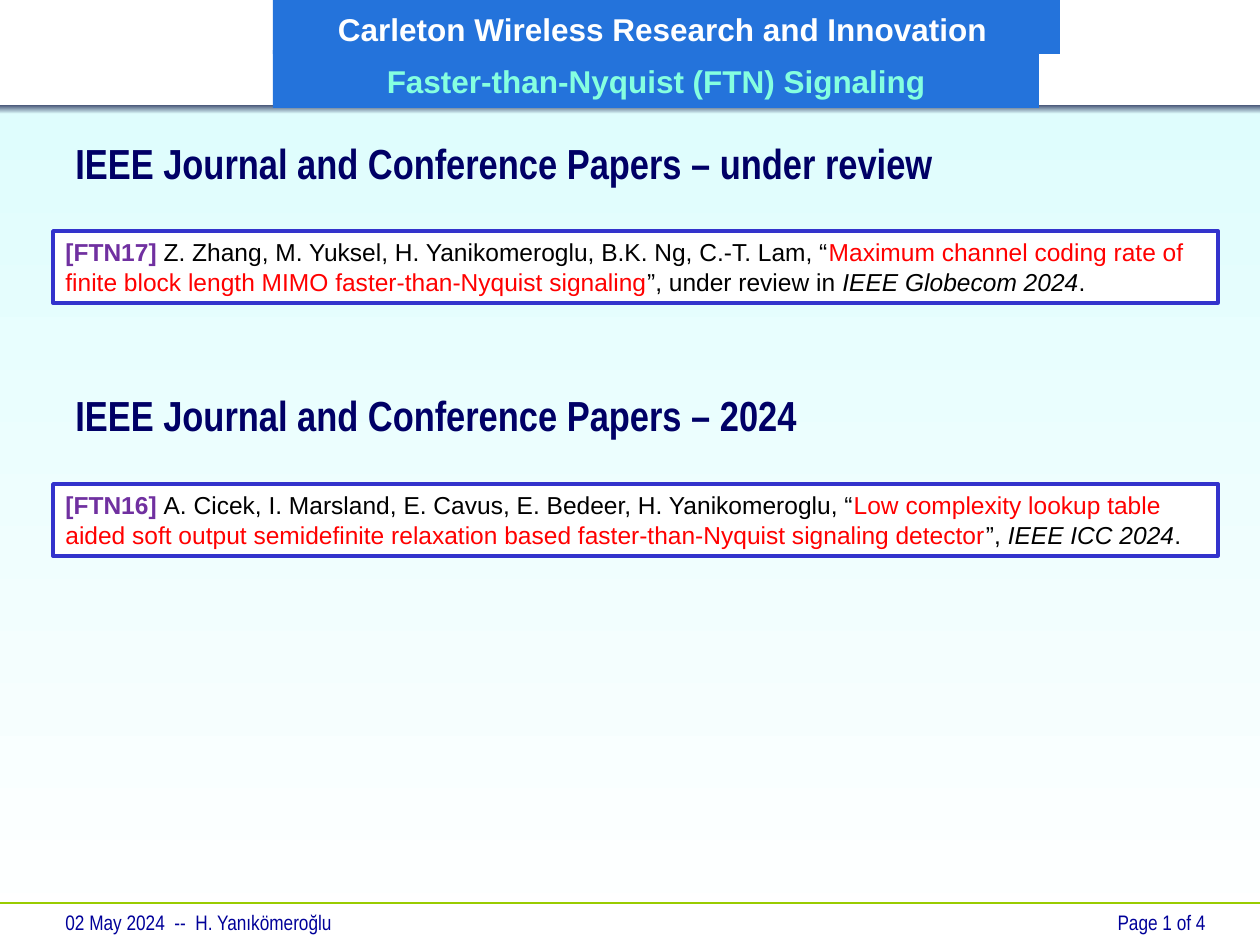
from lxml.etree import SubElement
from pptx import Presentation
from pptx.dml.color import RGBColor
from pptx.enum.shapes import MSO_CONNECTOR, MSO_SHAPE
from pptx.enum.text import MSO_ANCHOR as Anchor, PP_ALIGN as Align
from pptx.oxml.ns import qn
from pptx.util import Pt

EMU_PER_PX = 914400 / 126
SLIDE_W, SLIDE_H = 1260, 945

COLORS = {
    "white": "FFFFFF", "black": "000000", "red": "FF0000",
    "sky": "DFFDFD", "slate": "475577", "lime": "99CC00",
    "banner": "2473DB", "mint": "85FFE0", "heading": "000066",
    "footer": "000099", "border": "3333CC", "label": "7030A0",
}

SECTIONS = [
    {
        "heading": "IEEE Journal and Conference Papers – under review",
        "heading_top": 136, "citation_top": 231,
        "label": "[FTN17] ",
        "authors": "Z. Zhang, M. Yuksel, H. Yanikomeroglu, B.K. Ng, C.-T. Lam, “",
        "paper": "Maximum channel coding rate of finite block length MIMO "
                 "faster-than-Nyquist signaling",
        "status": "”, under review in ",
        "venue": "IEEE Globecom 2024",
    },
    {
        "heading": "IEEE Journal and Conference Papers – 2024",
        "heading_top": 388, "citation_top": 484,
        "label": "[FTN16] ",
        "authors": "A. Cicek, I. Marsland, E. Cavus, E. Bedeer, H. Yanikomeroglu, “",
        "paper": "Low complexity lookup table aided soft output semidefinite "
                 "relaxation based faster-than-Nyquist signaling detector",
        "status": "”, ",
        "venue": "IEEE ICC 2024",
    },
]


def px(*lengths):
    return [round(length * EMU_PER_PX) for length in lengths]


def rgb(name):
    return RGBColor.from_string(COLORS[name])


def style(font, size, color, face="Arial", bold=False, italic=False):
    font.name, font.size = face, Pt(size)
    font.bold, font.italic = bold, italic
    font.color.rgb = rgb(color)


def add_rect(slide, box, fill=None):
    rect = slide.shapes.add_shape(MSO_SHAPE.RECTANGLE, *px(*box))
    rect.shadow.inherit = False
    rect.line.fill.background()
    if fill:
        rect.fill.solid()
        rect.fill.fore_color.rgb = rgb(fill)
    return rect


def add_fade(slide, box, top_color, bottom_color):
    """Rectangle whose colour changes from top to bottom."""
    fill = add_rect(slide, box).fill
    fill.gradient()
    fill.gradient_angle = 270
    for stop, color in zip(fill.gradient_stops, (top_color, bottom_color)):
        stop.color.rgb = rgb(color)


def add_rule(slide, y):
    rule = slide.shapes.add_connector(
        MSO_CONNECTOR.STRAIGHT, *px(0, y, SLIDE_W, y))
    rule.line.color.rgb = rgb("lime")
    rule.line.width = Pt(0.75)
    SubElement(rule._element.spPr, qn("a:effectLst"))


def add_banner(slide, box, text, color, align, indent=0):
    frame = add_rect(slide, box, "banner").text_frame
    frame.word_wrap = True
    frame.vertical_anchor = Anchor.MIDDLE
    frame.margin_left = px(13 + indent)[0]
    frame.text = text
    line = frame.paragraphs[0]
    line.alignment, line.line_spacing = align, 1.1
    style(line.runs[0].font, 18, color, bold=True)


def add_label(slide, box, text, size, color, bold=False,
              align=Align.LEFT, anchor=Anchor.TOP):
    frame = slide.shapes.add_textbox(*px(*box)).text_frame
    frame.word_wrap = True
    frame.vertical_anchor = anchor
    frame.text = text
    line = frame.paragraphs[0]
    line.alignment = align
    style(line.runs[0].font, size, color, "Arial Narrow", bold)


def add_citation(slide, section):
    card = add_rect(slide, (53, section["citation_top"], 1165, 72), "white")
    card.line.color.rgb = rgb("border")
    card.line.width = Pt(2)
    frame = card.text_frame
    frame.word_wrap = True
    frame.vertical_anchor = Anchor.TOP
    entry = frame.paragraphs[0]
    entry.alignment = Align.LEFT
    for text, color, bold, italic in (
        (section["label"], "label", True, False),
        (section["authors"], "black", False, False),
        (section["paper"], "red", False, False),
        (section["status"], "black", False, False),
        (section["venue"], "black", False, True),
        (".", "black", False, False),
    ):
        run = entry.add_run()
        run.text = text
        style(run.font, 14, color, bold=bold, italic=italic)


def main():
    deck = Presentation()
    deck.slide_width, deck.slide_height = px(SLIDE_W, SLIDE_H)
    slide = deck.slides.add_slide(deck.slide_layouts[6])

    add_fade(slide, (0, 108, SLIDE_W, 837), "sky", "white")
    add_rule(slide, 903)
    add_label(slide, (53, 903, 924, 42), "02 May 2024  --  H. Yanıkömeroğlu",
              12, "footer")
    add_label(slide, (945, 903, 273, 32), "Page 1 of 4", 12, "footer",
              align=Align.RIGHT)
    add_fade(slide, (0, 105, SLIDE_W, 9), "slate", "sky")
    add_banner(slide, (273, 0, 787, 54),
               "Carleton Wireless Research and Innovation", "white",
               Align.LEFT, indent=52)
    add_banner(slide, (273, 50, 766, 58),
               "Faster-than-Nyquist (FTN) Signaling", "mint", Align.CENTER)

    for section in SECTIONS:
        add_label(slide, (63, section["heading_top"], 1187, 53),
                  section["heading"], 24, "heading", bold=True,
                  anchor=Anchor.MIDDLE)
        add_citation(slide, section)

    deck.save("out.pptx")


if __name__ == "__main__":
    main()
